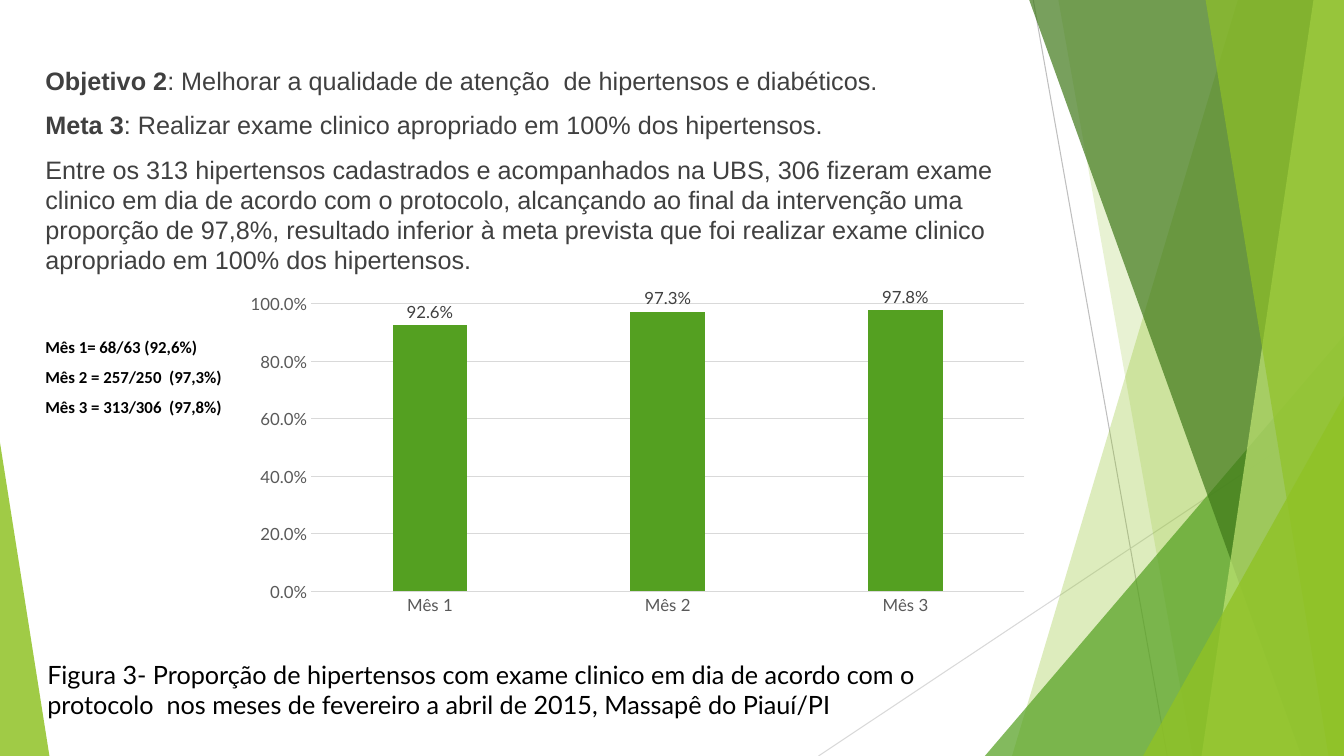
from lxml.etree import SubElement
from pptx import Presentation
from pptx.chart.data import CategoryChartData
from pptx.dml.color import RGBColor
from pptx.enum.chart import XL_CHART_TYPE as ChartType, XL_LABEL_POSITION as LabelPosition
from pptx.enum.chart import XL_TICK_MARK as TickMark
from pptx.enum.shapes import MSO_CONNECTOR as Connector, MSO_SHAPE as Shape
from pptx.enum.text import MSO_ANCHOR as Anchor, MSO_AUTO_SIZE as AutoSize
from pptx.oxml import parse_xml
from pptx.oxml.ns import nsdecls, qn
from pptx.util import Inches, Pt

WIDTH, HEIGHT = Inches(13.33), Inches(7.5)
LIME, GREEN, FOREST, PALE = "90C226", "54A021", "3F7819", "C0E474"
BLACK, DARK, GREY, RULE = "000000", "404040", "595959", "D9D9D9"

# Percent of the slide's width: top left edge, bottom left edge; colour, opacity
BANDS_BEHIND = [(92.1, 75.3, LIME, 30), (78.75, 88.73, LIME, 20)]
BANDS_FRONT = [(76.58, 96.83, FOREST, 70), (97.73, 89.4, PALE, 70), (89.7, 98.85, LIME, 65)]

GOALS = [
    ("Objetivo 2", ": Melhorar a qualidade de atenção  de hipertensos e diabéticos."),
    ("Meta 3", ": Realizar exame clinico apropriado em 100% dos hipertensos."),
    ("", "Entre os 313 hipertensos cadastrados e acompanhados na UBS, 306 fizeram exame "
         "clinico em dia de acordo com o protocolo, alcançando ao final da intervenção uma "
         "proporção de 97,8%, resultado inferior à meta prevista que foi realizar exame "
         "clinico apropriado em 100% dos hipertensos."),
]
COUNTS = ["Mês 1= 68/63 (92,6%)", "Mês 2 = 257/250  (97,3%)", "Mês 3 = 313/306  (97,8%)"]
CAPTION = ("Figura 3- Proporção de hipertensos com exame clinico em dia de acordo com o "
           "protocolo  nos meses de fevereiro a abril de 2015, Massapê do Piauí/PI")
RATES = {"Mês 1": 0.926, "Mês 2": 0.973, "Mês 3": 0.978}


def color(code):
    return RGBColor.from_string(code)


def across(percent):
    return round(WIDTH * percent / 100)


def down(percent):
    return round(HEIGHT * percent / 100)


def area(left, top, width, height):
    """Turn percentages of the slide into left, top, width and height."""
    return across(left), down(top), across(width), down(height)


def paint(shape, code, opacity):
    shape.shadow.inherit = False
    shape.line.fill.background()
    shape.fill.solid()
    shape.fill.fore_color.rgb = color(code)
    tint = shape.fill._xPr.find(qn("a:solidFill"))[0]
    SubElement(tint, qn("a:alpha"), val=str(opacity * 1000))


def add_band(page, top_left, bottom_left, code, opacity):
    """Fill from a slanted edge to the right side of the slide."""
    builder = page.shapes.build_freeform(across(top_left), 0)
    builder.add_line_segments([(WIDTH, 0), (WIDTH, HEIGHT), (across(bottom_left), HEIGHT)])
    paint(builder.convert_to_shape(), code, opacity)


def add_corner(page, left, top, width, apex, code, opacity):
    """Add a right triangle standing on the bottom of the slide."""
    corner = page.shapes.add_shape(Shape.ISOSCELES_TRIANGLE, *area(left, top, width, 100 - top))
    corner.adjustments[0] = apex
    paint(corner, code, opacity)


def add_rule(page, start, end, code):
    rule = page.shapes.add_connector(
        Connector.STRAIGHT, across(start[0]), down(start[1]), across(end[0]), down(end[1]))
    rule.line.color.rgb = color(code)
    rule.line.width = Pt(0.75)
    SubElement(rule._element.spPr, qn("a:effectLst"))


def add_backdrop(page):
    add_rule(page, (76.88, 0), (86.85, 100), "BFBFBF")
    add_rule(page, (100, 53.73), (60.9, 100), RULE)
    for band in BANDS_BEHIND:
        add_band(page, *band)
    add_corner(page, 73.28, 44.4, 26.72, 1, GREEN, 72)
    for band in BANDS_FRONT:
        add_band(page, *band)
    add_corner(page, 85.05, 52.4, 14.95, 1, LIME, 80)
    add_corner(page, 0, 58.53, 3.68, 0, LIME, 85)


def style(font, name, size, code, bold=False):
    font.name, font.size, font.bold = name, Pt(size), bold
    font.color.rgb = color(code)


def add_span(para, text, **form):
    span = para.add_run()
    span.text = text
    style(span.font, **form)


def fill_body(page, body):
    body.left, body.top, body.width, body.height = area(2.63, 8, 75.9, 82.93)
    page.shapes._spTree.append(body._element)  # in front of the backdrop
    frame = body.text_frame
    frame.vertical_anchor = Anchor.TOP
    frame.auto_size = AutoSize.NONE
    for index, (lead, text) in enumerate(GOALS):
        para = frame.add_paragraph() if index else frame.paragraphs[0]
        para.space_before = Pt(10)
        layout = para._p.get_or_add_pPr()
        layout.set("marL", "0")
        layout.set("indent", "0")
        SubElement(layout, qn("a:buNone"))
        if lead:
            add_span(para, lead, name="Arial", size=18, code=DARK, bold=True)
        add_span(para, text, name="Arial", size=18, code=DARK)


def add_text(page, place, lines, spacing=1.0, **form):
    frame = page.shapes.add_textbox(*area(*place)).text_frame
    frame.word_wrap = True
    frame.auto_size = AutoSize.SHAPE_TO_FIT_TEXT
    for index, line in enumerate(lines):
        para = frame.add_paragraph() if index else frame.paragraphs[0]
        para.line_spacing = spacing
        add_span(para, line, **form)


def format_axis(axis):
    axis.major_tick_mark = axis.minor_tick_mark = TickMark.NONE
    style(axis.tick_labels.font, "Lato", 12, GREY)


def set_plot_area(chart, **shares):
    """Fix the inner plot area at shares of the chart's size."""
    parts = "".join(f'<c:{key} val="{value}"/>' for key, value in shares.items())
    layout = parse_xml(
        f'<c:layout {nsdecls("c")}><c:manualLayout><c:layoutTarget val="inner"/>'
        f'<c:xMode val="edge"/><c:yMode val="edge"/>{parts}</c:manualLayout></c:layout>')
    plot_area = chart._chartSpace.chart.plotArea
    for previous in plot_area.findall(qn("c:layout")):
        plot_area.remove(previous)
    plot_area.insert(0, layout)


def add_rate_chart(page):
    data = CategoryChartData(number_format="0.0%")
    data.categories = list(RATES)
    data.add_series("Series 1", list(RATES.values()))
    chart = page.shapes.add_chart(
        ChartType.COLUMN_CLUSTERED, *area(17.78, 37.87, 59.63, 45.33), data).chart
    chart.has_legend = chart.has_title = False
    style(chart.font, "Lato", 10, BLACK)
    set_plot_area(chart, x=0.09, y=0.05, w=0.89, h=0.84)

    months, rates = chart.category_axis, chart.value_axis
    format_axis(months)
    format_axis(rates)
    rates.minimum_scale, rates.maximum_scale, rates.major_unit = 0, 1, 0.2
    rates.tick_labels.number_format = "0.0%"
    rates.tick_labels.number_format_is_linked = False
    rates.format.line.fill.background()
    for line in (months.format.line, rates.major_gridlines.format.line):
        line.color.rgb = color(RULE)
        line.width = Pt(0.75)

    plot = chart.plots[0]
    plot.vary_by_categories = False
    plot.gap_width, plot.overlap = 219, -27
    columns = plot.series[0]
    columns.format.fill.solid()
    columns.format.fill.fore_color.rgb = color(GREEN)
    labels = columns.data_labels
    labels.show_value = True
    labels.number_format, labels.number_format_is_linked = "0.0%", False
    labels.position = LabelPosition.OUTSIDE_END
    style(labels.font, "Lato", 12, DARK)


def main():
    deck = Presentation()
    deck.slide_width, deck.slide_height = WIDTH, HEIGHT
    page = deck.slides.add_slide(deck.slide_layouts[1])
    title = page.shapes.title.element
    title.getparent().remove(title)
    add_backdrop(page)
    fill_body(page, page.placeholders[1])
    add_rate_chart(page)
    add_text(page, (2.78, 86.53, 67.2, 13.47), [CAPTION], name="Lato", size=18, code=BLACK)
    add_text(page, (2.63, 42.53, 50.03, 13.47), COUNTS, spacing=1.5,
             name="Calibri", size=12, code=BLACK, bold=True)
    deck.save("out.pptx")


if __name__ == "__main__":
    main()
